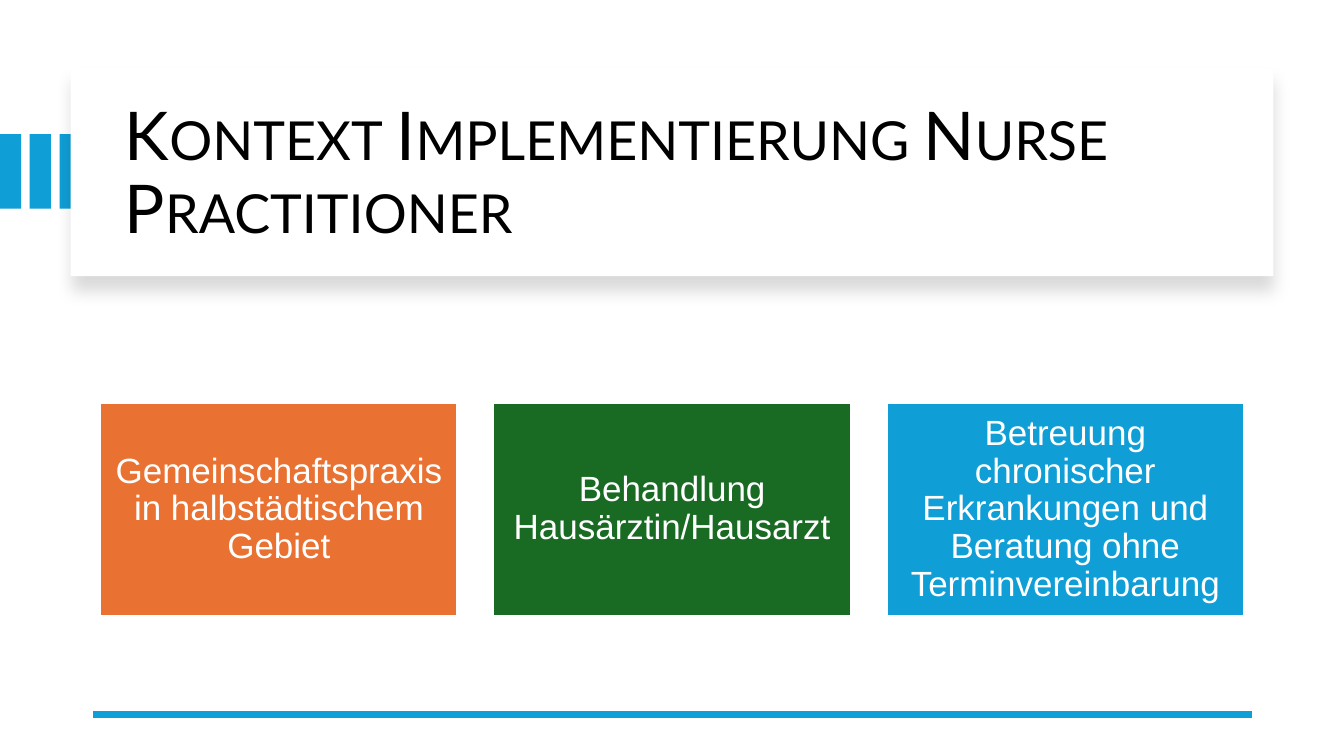
from lxml.etree import SubElement
from pptx import Presentation
from pptx.dml.color import RGBColor
from pptx.enum.shapes import MSO_CONNECTOR, MSO_SHAPE
from pptx.enum.text import MSO_ANCHOR, PP_ALIGN
from pptx.oxml.ns import qn
from pptx.util import Inches, Pt

COLORS = {
    "blue": "0F9ED5",
    "orange": "E97132",
    "green": "196B24",
    "white": "FFFFFF",
    "black": "000000",
}


def add_box(s, x, y, w, h, color):
    sp = s.shapes.add_shape(MSO_SHAPE.RECTANGLE, Inches(x), Inches(y), Inches(w), Inches(h))
    sp.shadow.inherit = False
    sp.fill.solid()
    sp.fill.fore_color.rgb = RGBColor.from_string(COLORS[color])
    sp.line.fill.background()
    return sp


def write(sp, text, font, size, color, align):
    tf = sp.text_frame
    tf.word_wrap = True
    tf.vertical_anchor = MSO_ANCHOR.MIDDLE
    tf.text = text
    p = tf.paragraphs[0]
    p.alignment = align
    p.line_spacing = 0.9
    r = p.runs[0]
    r.font.name = font
    r.font.size = Pt(size)
    r.font.color.rgb = RGBColor.from_string(COLORS[color])
    return r


prs = Presentation()
prs.slide_width = Inches(13.33)
prs.slide_height = Inches(7.5)
s = prs.slides.add_slide(prs.slide_layouts[6])

for i in range(3):
    add_box(s, i * 0.295, 1.33, 0.21, 0.74, "blue")

panel = add_box(s, 0.7, 0.67, 11.93, 2.07, "white")
effects = panel._element.spPr.find(qn("a:effectLst"))
shadow = SubElement(effects, qn("a:outerShdw"), blurRad=str(Pt(11)), dist=str(Pt(10)),
                    dir="5400000", algn="t", rotWithShape="0")
shade = SubElement(shadow, qn("a:srgbClr"), val=COLORS["black"])
SubElement(shade, qn("a:alpha"), val="15000")

title = s.shapes.add_textbox(Inches(1.14), Inches(0.89), Inches(11.12), Inches(1.7))
r = write(title, "Kontext Implementierung Nurse Practitioner", "Lato", 48, "black", PP_ALIGN.LEFT)
r.font._element.set("cap", "small")

rule = s.shapes.add_connector(MSO_CONNECTOR.STRAIGHT, Inches(12.42), Inches(7.09),
                              Inches(0.92), Inches(7.09))
rule.line.color.rgb = RGBColor.from_string(COLORS["blue"])
rule.line.width = Pt(4.5)
SubElement(rule._element.spPr, qn("a:effectLst"))

cards = [
    ("orange", "Gemeinschaftspraxis in halbstädtischem Gebiet"),
    ("green", "Behandlung Hausärztin/Hausarzt"),
    ("blue", "Betreuung chronischer Erkrankungen und Beratung ohne Terminvereinbarung"),
]
for i, (color, text) in enumerate(cards):
    card = add_box(s, 0.99 + i * 3.9, 3.99, 3.55, 2.13, color)
    card.line.color.rgb = RGBColor.from_string(COLORS["white"])
    card.line.width = Pt(2)
    tf = card.text_frame
    tf.margin_left = tf.margin_right = tf.margin_top = tf.margin_bottom = Inches(0.1)
    write(card, text, "Arial", 25, "white", PP_ALIGN.CENTER)

prs.save("out.pptx")
